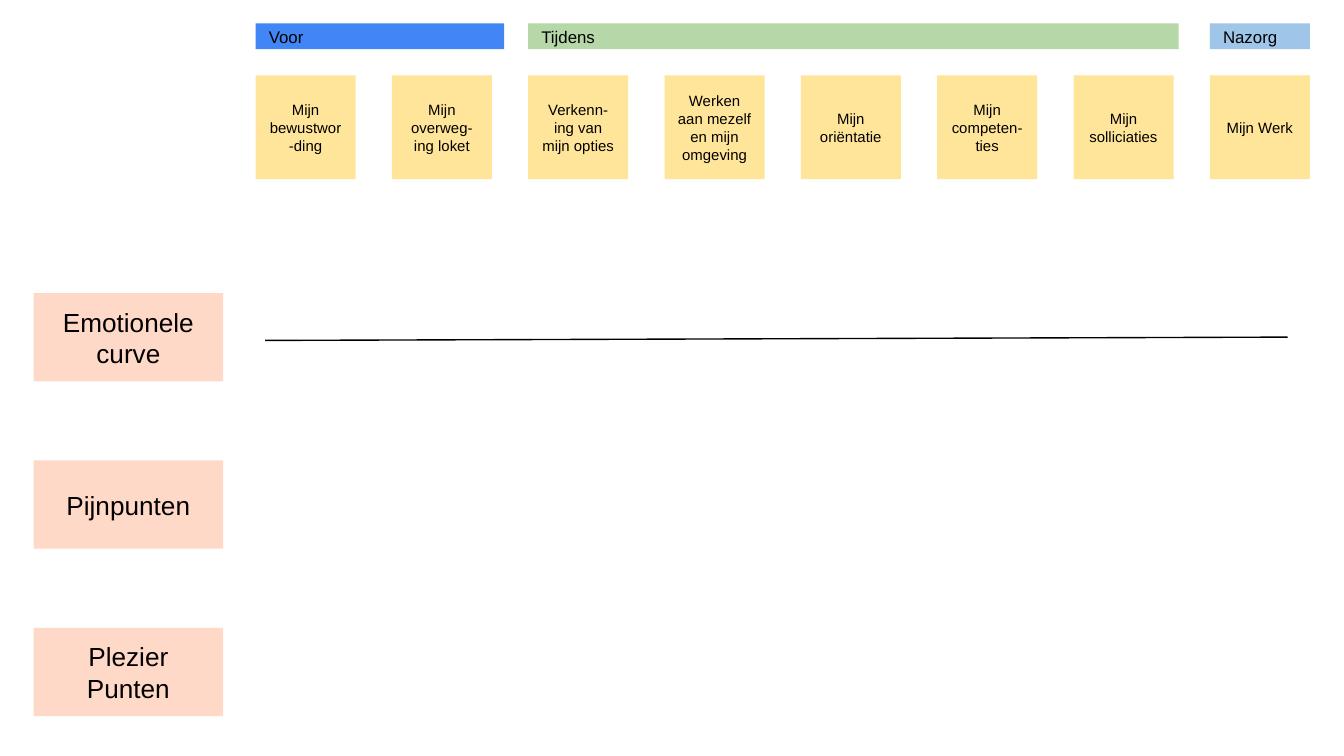
from lxml import etree
from pptx import Presentation
from pptx.dml.color import RGBColor
from pptx.enum.shapes import MSO_CONNECTOR, MSO_SHAPE
from pptx.enum.text import MSO_ANCHOR, PP_ALIGN
from pptx.oxml.ns import qn
from pptx.util import Pt

RECTANGLE = MSO_SHAPE.RECTANGLE
STRAIGHT = MSO_CONNECTOR.STRAIGHT
MIDDLE = MSO_ANCHOR.MIDDLE
LEFT, CENTER = PP_ALIGN.LEFT, PP_ALIGN.CENTER

FONT = "Arial"
BLACK = "000000"
CARD_COLOR = "FFE599"
LABEL_COLOR = "FFD9C8"
COLUMN_PITCH = 73.03
CARD_WIDTH = 53.6
INSET = 7.2

PHASES = [
    ("Voor", 0, 133.2, "4285F4"),
    ("Tijdens", 2, 348.5, "B6D7A8"),
    ("Nazorg", 7, CARD_WIDTH, "9FC5E8"),
]
STEPS = [
    ["Mijn bewustwor-ding"],
    ["Mijn overweg-", "ing loket"],
    ["Verkenn-", "ing van mijn opties"],
    ["Werken aan mezelf en mijn omgeving"],
    ["Mijn oriëntatie"],
    ["Mijn competen-ties"],
    ["Mijn solliciaties"],
    ["Mijn Werk"],
]
ROW_LABELS = ["Emotionele curve", "Pijnpunten", "Plezier Punten"]


def color(value):
    return RGBColor.from_string(value)


def add_box(slide, left, top, width, height, fill, lines, size, alignment=CENTER):
    shape = slide.shapes.add_shape(
        RECTANGLE, Pt(left), Pt(top), Pt(width), Pt(height))
    shape.shadow.inherit = False
    shape.fill.solid()
    shape.fill.fore_color.rgb = color(fill)
    shape.line.fill.background()
    frame = shape.text_frame
    frame.word_wrap = True
    frame.vertical_anchor = MIDDLE
    frame.margin_left = frame.margin_right = Pt(INSET)
    frame.margin_top = frame.margin_bottom = Pt(INSET)
    for index, line in enumerate(lines):
        paragraph = frame.add_paragraph() if index else frame.paragraphs[0]
        paragraph.alignment = alignment
        run = paragraph.add_run()
        run.text = line
        run.font.name = FONT
        run.font.size = Pt(size)
        run.font.color.rgb = color(BLACK)


def add_row_labels(slide, left, top, width, height, pitch):
    for index, label in enumerate(ROW_LABELS):
        add_box(slide, left, top + index * pitch, width, height,
                LABEL_COLOR, [label], 14)


def add_emotion_line(slide, left, top, width, height):
    connector = slide.shapes.add_connector(
        STRAIGHT, Pt(left), Pt(top + height), Pt(left + width), Pt(top))
    connector.line.color.rgb = color(BLACK)
    connector.line.width = Pt(0.75)
    properties = connector._element.spPr
    etree.SubElement(properties, qn("a:effectLst"))


def add_phases(slide, left, top, height):
    for name, column, width, fill in PHASES:
        add_box(slide, left + column * COLUMN_PITCH, top, width, height,
                fill, [name], 9, LEFT)


def add_steps(slide, left, top, height):
    for column, lines in enumerate(STEPS):
        add_box(slide, left + column * COLUMN_PITCH, top, CARD_WIDTH, height,
                CARD_COLOR, lines, 8)


def main():
    presentation = Presentation()
    presentation.slide_width = Pt(720)
    presentation.slide_height = Pt(405)
    slide = presentation.slides.add_slide(presentation.slide_layouts[6])
    add_row_labels(slide, 18, 157, 101.6, 47.3, 89.7)
    add_emotion_line(slide, 142, 180.6, 547.8, 1.8)
    add_phases(slide, 136.9, 12.5, 13.9)
    add_steps(slide, 136.9, 40.4, 55.6)
    presentation.save("out.pptx")


if __name__ == "__main__":
    main()
